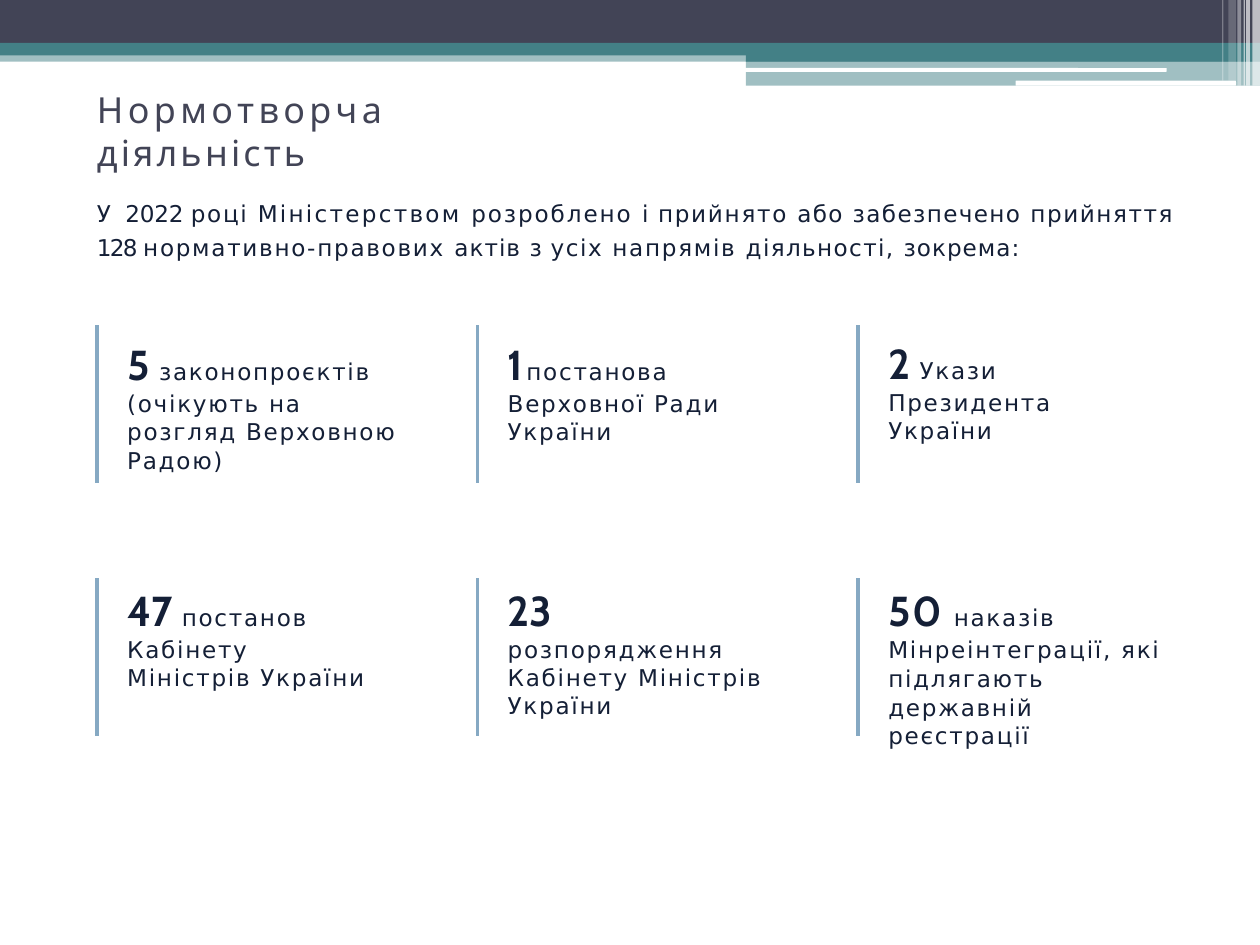
import copy
from dataclasses import dataclass

import pptx
import pptx.dml.color
import pptx.enum.shapes
import pptx.enum.text
import pptx.oxml.ns
import pptx.oxml.xmlchemy
import pptx.util
from pptx.util import Inches

SHAPE = pptx.enum.shapes.MSO_SHAPE
ANCHOR = pptx.enum.text.MSO_ANCHOR
BREAK = "\n"


@dataclass(frozen=True)
class Theme:
    slate: str = "424456"
    teal: str = "438086"
    white: str = "FFFFFF"
    ink: str = "141F36"
    rule: str = "86A9C3"
    head: str = "Cabin"
    body: str = "DejaVu Sans"
    title: float = 20.5
    count: float = 23.9
    text: float = 13.2
    line: float = 2.25


THEME = Theme()


@dataclass(frozen=True)
class Bar:
    left: float
    top: float
    width: float
    height: float
    color: str
    alpha: int = 100
    round: bool = False


@dataclass(frozen=True)
class Span:
    text: str
    gap: float = 1.0
    size: float = THEME.text
    face: str = THEME.body
    color: str = THEME.ink
    bold: bool = False


@dataclass(frozen=True)
class Card:
    count: str
    text: str
    gap: float = 0.0
    height: float = 0.85
    space: float = 1.02


BARS = [
    Bar(0, 0.4, 10, 0.09, THEME.teal, 50),
    Bar(0, 0, 10, 0.34, THEME.slate),
    Bar(0, 0.34, 10, 0.1, THEME.teal),
    Bar(5.92, 0.39, 4.08, 0.1, THEME.teal),
    Bar(5.92, 0.48, 4.08, 0.2, THEME.teal, 50),
    Bar(5.91, 0.54, 3.35, 0.03, THEME.white, round=True),
    Bar(8.06, 0.64, 1.75, 0.04, THEME.white, round=True),
] + [
    Bar(left, 0, width, height, THEME.white, alpha)
    for left, width, height, alpha in [
        (9.94, 0.06, 0.68, 65), (9.89, 0.03, 0.68, 65),
        (9.87, 0.01, 0.68, 60), (9.82, 0.03, 0.68, 40),
        (9.75, 0.06, 0.64, 20), (9.7, 0.01, 0.64, 30),
    ]
]

TITLE = [
    Span("Нормотворча\n", 2.5, THEME.title, THEME.head, THEME.slate),
    Span("діяльність", 1.8, THEME.title, THEME.head, THEME.slate),
]

INTRO = [
    Span("У ", 2), Span("2022 ", -0.1), Span("році ", 1),
    Span("Міністерством ", 1.3), Span("розроблено ", 1.1),
    Span("і ", 0.6), Span("прийнято ", 1), Span("або забезпечено ", 0.8),
    Span("прийняття\n", 0.9), Span("128 ", -1),
    Span("нормативно-правових ", 1), Span("актів ", 0.6), Span("з ", 0.4),
    Span("усіх ", 0.9), Span("напрямів ", 1), Span("діяльності, ", 0.8),
    Span("зокрема:", 0.6),
]

CARDS = [
    Card("5 ", "законопроєктів\n(очікують на\nрозгляд Верховною\nРадою)"),
    Card("1 ", "постанова\nВерховної Ради\nУкраїни", -3.5),
    Card("2 ", "Укази\nПрезидента\nУкраїни", -0.1, space=1.01),
    Card("47 ", "постанов\nКабінету\nМіністрів України", -0.1),
    Card("23\n", "розпорядження\nКабінету Міністрів\nУкраїни", -0.2),
    Card("50 ", "наказів\nМінреінтеграції, які\nпідлягають\nдержавній\nреєстрації",
         0.8, 1.09, 1.03),
]
COLS = 3
CARD_WIDTH = 2.4
COL_STEP = 3.02
RULE_LEFT, RULE_HEIGHT = 0.77, 1.25
RULE_TOPS = (2.58, 4.59)
TEXT_LEFT = 1.0
TEXT_TOPS = (2.67, 4.62)


def tint(hue: str) -> pptx.dml.color.RGBColor:
    return pptx.dml.color.RGBColor.from_string(hue)


def apply(target: object, values: dict) -> None:
    """Set each named attribute of the target."""
    for name, value in values.items():
        setattr(target, name, value)


def draw_bar(slide, bar: Bar) -> None:
    kind = SHAPE.ROUNDED_RECTANGLE if bar.round else SHAPE.RECTANGLE
    box = slide.shapes.add_shape(
        kind, *map(Inches, (bar.left, bar.top, bar.width, bar.height)))
    box.shadow.inherit = False
    box.line.fill.background()
    box.fill.solid()
    box.fill.fore_color.rgb = tint(bar.color)
    if bar.alpha < 100:
        node = box._element.spPr.find(".//" + pptx.oxml.ns.qn("a:srgbClr"))
        alpha = pptx.oxml.xmlchemy.OxmlElement("a:alpha")
        alpha.set("val", str(bar.alpha * 1000))
        node.append(alpha)


def draw_rule(slide, left: float, top: float) -> None:
    rule = slide.shapes.add_connector(
        pptx.enum.shapes.MSO_CONNECTOR.STRAIGHT,
        *map(Inches, (left, top, left, top + RULE_HEIGHT)))
    rule.line.color.rgb = tint(THEME.rule)
    rule.line.width = pptx.util.Pt(THEME.line)
    rule._element.spPr.append(pptx.oxml.xmlchemy.OxmlElement("a:effectLst"))


def write(frame, spans: list[Span], space: float, before: float,
          anchor=ANCHOR.TOP) -> None:
    """Fill a frame with one paragraph; line breaks keep their run's format."""
    apply(frame, {
        "word_wrap": True,
        "auto_size": pptx.enum.text.MSO_AUTO_SIZE.SHAPE_TO_FIT_TEXT,
        "vertical_anchor": anchor,
        "margin_left": Inches(0.01), "margin_right": 0,
        "margin_top": Inches(0.01), "margin_bottom": 0,
    })
    para = frame.paragraphs[0]
    apply(para, {
        "alignment": pptx.enum.text.PP_ALIGN.LEFT,
        "line_spacing": space, "space_before": pptx.util.Pt(before),
    })
    for span in spans:
        for spot, part in enumerate(span.text.split(BREAK)):
            if spot:
                para.add_line_break()
                para._p[-1].append(copy.deepcopy(run._r.rPr))
            if part:
                run = para.add_run()
                run.text = part
                apply(run.font, {"size": pptx.util.Pt(span.size),
                                 "name": span.face, "bold": span.bold})
                run.font.color.rgb = tint(span.color)
                run._r.rPr.set("spc", str(round(span.gap * 100)))


def add_text(slide, left: float, top: float, width: float, height: float,
             spans: list[Span], space: float, before: float) -> None:
    box = slide.shapes.add_textbox(*map(Inches, (left, top, width, height)))
    write(box.text_frame, spans, space, before)


def draw_card(slide, spot: int, card: Card) -> None:
    row, col = divmod(spot, COLS)
    shift = col * COL_STEP
    draw_rule(slide, RULE_LEFT + shift, RULE_TOPS[row])
    spans = [
        Span(card.count, card.gap, THEME.count, THEME.head, bold=True),
        Span(card.text),
    ]
    add_text(slide, TEXT_LEFT + shift, TEXT_TOPS[row], CARD_WIDTH,
             card.height, spans, card.space, 0.3)


def main() -> None:
    deck = pptx.Presentation()
    apply(deck, {"slide_width": Inches(10), "slide_height": Inches(7.5)})
    slide = deck.slides.add_slide(deck.slide_layouts[5])
    for bar in BARS:
        draw_bar(slide, bar)
    title = slide.shapes.title
    apply(title, {"left": Inches(0.76), "top": Inches(0.85),
                  "width": Inches(4.03), "height": Inches(0.36)})
    write(title.text_frame, TITLE, 1.0, 0.9, ANCHOR.MIDDLE)
    add_text(slide, 0.76, 1.52, 8.82, 0.53, INTRO, 1.24, 0.8)
    for spot, card in enumerate(CARDS):
        draw_card(slide, spot, card)
    deck.save("out.pptx")


if __name__ == "__main__":
    main()
